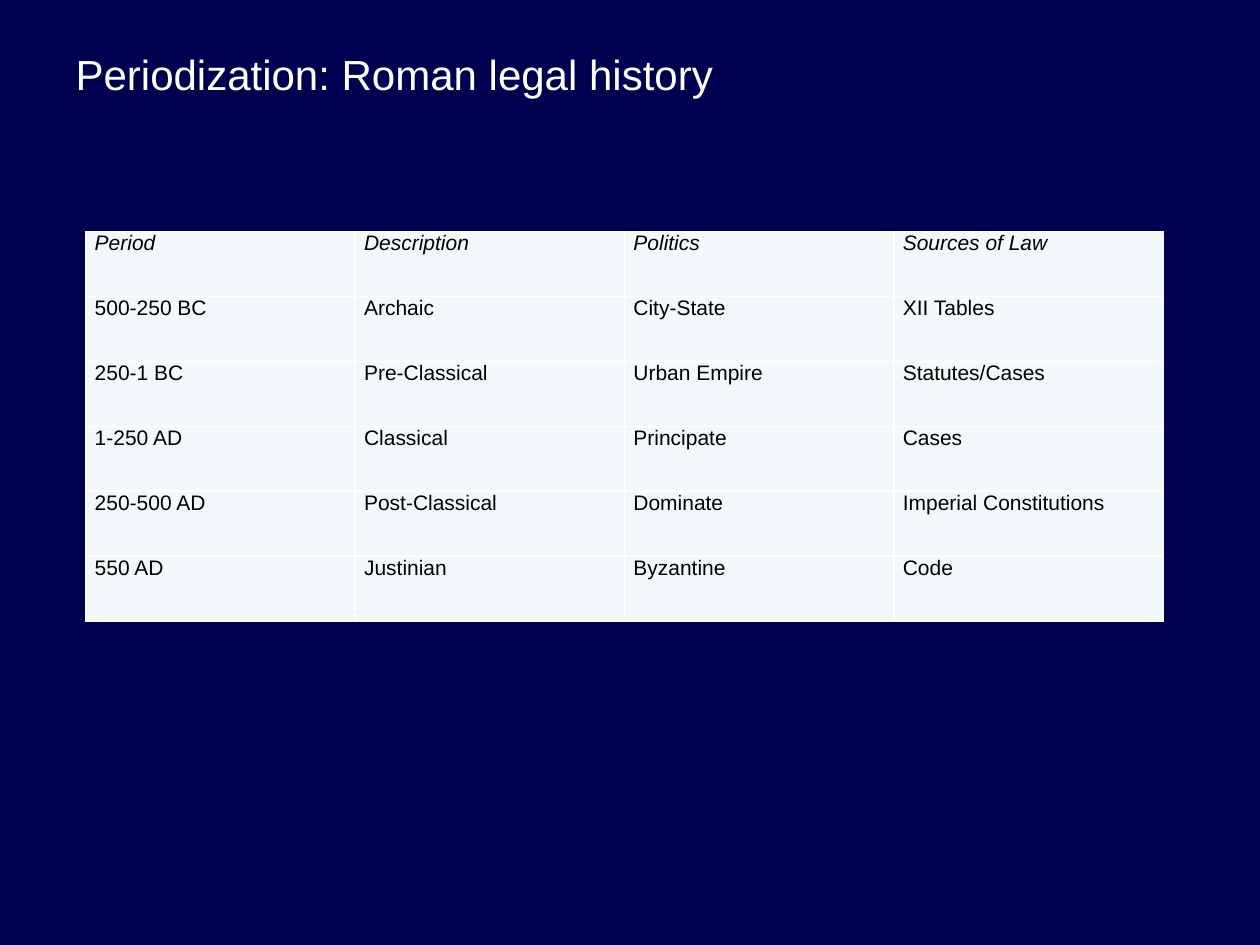
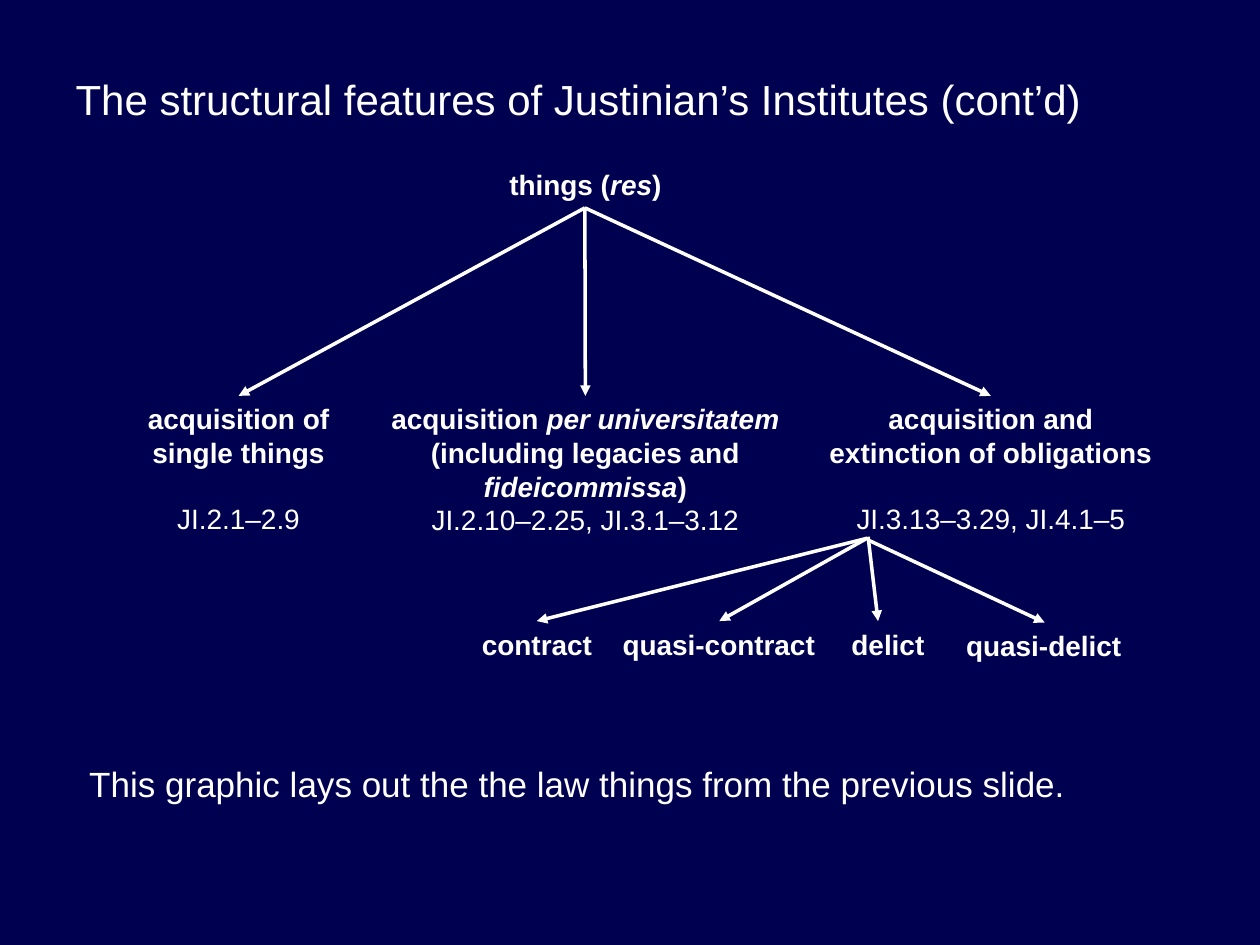
from lxml.etree import SubElement
from pptx import Presentation
from pptx.dml.color import RGBColor
from pptx.enum.shapes import MSO_CONNECTOR
from pptx.enum.text import MSO_ANCHOR, MSO_AUTO_SIZE, PP_ALIGN
from pptx.oxml.ns import qn
from pptx.util import Cm, Pt

COLOURS = {"navy": "000050", "white": "FFFFFF", "black": "000000", "cell": "F3F9FA"}
TITLE = {"size": Pt(24), "bold": False}
CELL = {"size": Pt(12), "bold": False}
HEADING = {"size": Pt(16), "bold": True}
CITATION = {"size": Pt(16), "bold": False}
CAPTION = {"size": Pt(20), "bold": False}


def write(para, text, style, colour="white", align=PP_ALIGN.LEFT):
    """Fill a paragraph; parts between asterisks become italic."""
    para.alignment = align
    for index, part in enumerate(text.split("*")):
        if part:
            span = para.add_run()
            span.text = part
            for name, value in {"name": "Arial", "italic": index % 2 == 1, **style}.items():
                setattr(span.font, name, value)
            span.font.color.rgb = RGBColor.from_string(COLOURS[colour])


def add_text(page, area, text, style, align=PP_ALIGN.CENTER):
    box = page.shapes.add_textbox(*[Cm(length) for length in area])
    box.text_frame.word_wrap = True
    box.text_frame.auto_size = MSO_AUTO_SIZE.SHAPE_TO_FIT_TEXT
    write(box.text_frame.paragraphs[0], text, style, align=align)
    return box


deck = Presentation()
deck.slide_width, deck.slide_height = Cm(25.4), Cm(19.05)

# Shared background
background = deck.slide_master.background.fill
background.solid()
background.fore_color.rgb = RGBColor.from_string(COLOURS["navy"])

# Pages with their titles
titles = [
    ("Periodization: Roman legal history", 0.86, 1.9),
    ("The structural features of Justinian’s Institutes (cont’d)", 1.35, 1.27),
]
pages = []
for text, top, height in titles:
    page = deck.slides.add_slide(deck.slide_layouts[5])
    title = page.shapes.title
    title.left, title.top, title.width, title.height = Cm(1.27), Cm(top), Cm(24.13), Cm(height)
    frame = title.text_frame
    frame.vertical_anchor = MSO_ANCHOR.TOP
    frame.auto_size = MSO_AUTO_SIZE.NONE
    write(frame.paragraphs[0], text, TITLE)
    pages.append(page)
history_page, things_page = pages

# Table of periods
periods = [
    ["Period", "Description", "Politics", "Sources of Law"],
    ["500-250 BC", "Archaic", "City-State", "XII Tables"],
    ["250-1 BC", "Pre-Classical", "Urban Empire", "Statutes/Cases"],
    ["1-250 AD", "Classical", "Principate", "Cases"],
    ["250-500 AD", "Post-Classical", "Dominate", "Imperial Constitutions"],
    ["550 AD", "Justinian", "Byzantine", "Code"],
]
cell_format = {
    "margin_left": Cm(0.18), "margin_right": Cm(0.18),
    "margin_top": 0, "margin_bottom": 0, "vertical_anchor": MSO_ANCHOR.TOP,
}
table = history_page.shapes.add_table(
    len(periods), len(periods[0]), Cm(1.73), Cm(4.67), Cm(21.72), Cm(7.85)).table
table.first_row = table.horz_banding = False
for row, values in enumerate(periods):
    for column, value in enumerate(values):
        cell = table.cell(row, column)
        for name, setting in cell_format.items():
            setattr(cell, name, setting)
        # White borders come before the fill
        properties = cell._tc.get_or_add_tcPr()
        for side in ("a:lnL", "a:lnR", "a:lnT", "a:lnB"):
            border = SubElement(properties, qn(side), w=str(Pt(1)))
            paint = SubElement(border, qn("a:solidFill"))
            SubElement(paint, qn("a:srgbClr"), val=COLOURS["white"])
        cell.fill.solid()
        cell.fill.fore_color.rgb = RGBColor.from_string(COLOURS["cell"])
        para = cell.text_frame.paragraphs[0]
        para.space_after = Pt(5)
        write(para, value, {**CELL, "italic": row == 0}, "black")

# Root of the tree
add_text(things_page, (9.3, 3.25, 5, 0.94), "things (*res*)", HEADING)
arrows = []

# Branches: left, width, heading, citation, gap above the citation
branches = [
    (2.31, 5, "acquisition of single things", "JI.2.1–2.9", 18.4),
    (7.37, 8.86, "acquisition *per universitatem *(including legacies and *fideicommissa*)",
     "JI.2.10–2.25, JI.3.1–3.12", 0),
    (16.38, 7.19, "acquisition and extinction of obligations", "JI.3.13–3.29, JI.4.1–5", 18.4),
]
for left, width, heading, citation, gap in branches:
    box = add_text(things_page, (left, 7.98, width, 3), heading, HEADING)
    para = box.text_frame.add_paragraph()
    para.space_before = Pt(gap)
    write(para, citation, CITATION, align=PP_ALIGN.CENTER)
    arrows.append((left + width / 2, 7.98, 11.79, 4.19))

# Kinds of obligation: left, top, width, name, arrow tip, arrow start
obligations = [
    (9.3, 12.52, 3.05, "contract", 10.82, 17.48, 10.85),
    (12.14, 12.52, 4.7, "quasi-contract", 14.5, 17.48, 10.85),
    (16.87, 12.52, 2.06, "delict", 17.7, 17.5, 10.82),
    (18.69, 12.55, 4.7, "quasi-delict", 21.06, 17.53, 10.9),
]
for left, top, width, name, tip, start_x, start_y in obligations:
    add_text(things_page, (left, top, width, 0.94), name, HEADING)
    arrows.append((tip, top, start_x, start_y))

# Arrows, each with its head at the lower end
for ends in arrows:
    arrow = things_page.shapes.add_connector(
        MSO_CONNECTOR.STRAIGHT, *[Cm(length) for length in ends])
    arrow.line.width = Pt(2)
    arrow.line.color.rgb = RGBColor.from_string(COLOURS["white"])
    SubElement(arrow.line._get_or_add_ln(), qn("a:headEnd"), type="triangle")
    SubElement(arrow._element.spPr, qn("a:effectLst"))

# Caption
add_text(things_page, (1.55, 15.24, 23.6, 1.12),
         "This graphic lays out the the law things from the previous slide.",
         CAPTION, PP_ALIGN.LEFT)

deck.save("out.pptx")
